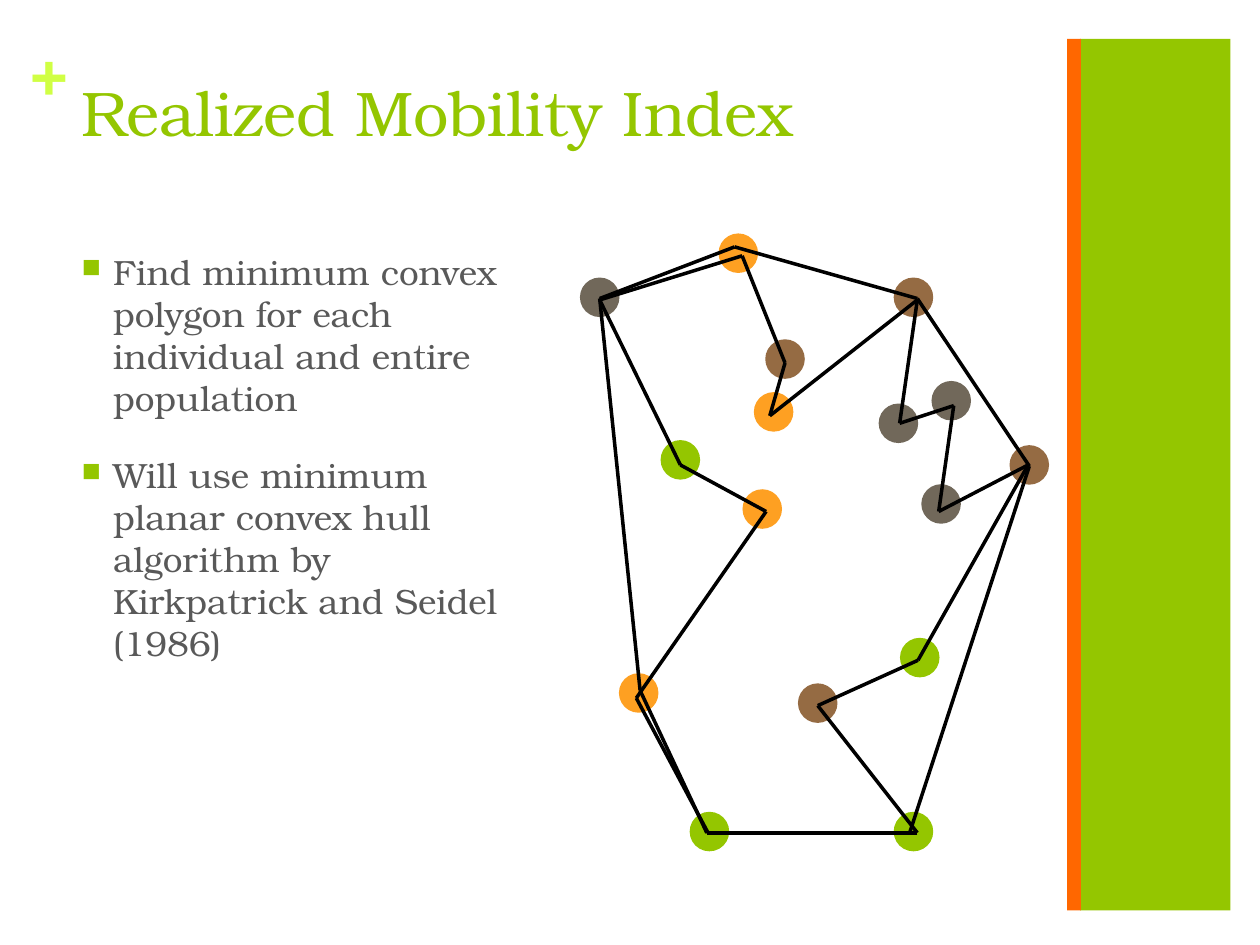
from dataclasses import dataclass
from typing import Any

from lxml.etree import SubElement
from pptx import Presentation
from pptx.dml.color import RGBColor
from pptx.enum.shapes import MSO_CONNECTOR, MSO_SHAPE
from pptx.enum.text import MSO_ANCHOR, PP_ALIGN
from pptx.oxml.ns import qn
from pptx.util import Pt

FONT = "TeX Gyre Bonum"
GREEN, ORANGE, LIME = "94C600", "FF6700", "D0FF44"
AMBER, GREY, BROWN = "FEA022", "71685A", "956B43"
TEXT, BLACK = "595959", "000000"
DOT_SIZE = 21.6

Point = tuple[float, float]


@dataclass(frozen=True)
class Area:
    left: float
    top: float
    width: float
    height: float

    def in_points(self) -> tuple[Pt, Pt, Pt, Pt]:
        return Pt(self.left), Pt(self.top), Pt(self.width), Pt(self.height)


@dataclass(frozen=True)
class DotGroup:
    color: str
    corners: list[Point]  # left and top of each dot


DOT_GROUPS = [
    DotGroup(AMBER, [(411.1, 133.9), (424.8, 280.1), (431.3, 224.6), (354.2, 385.2)]),
    DotGroup(GREY, [(532.8, 218.2), (502.6, 231.1), (527, 277.2), (331.9, 159.1)]),
    DotGroup(GREEN, [(378, 252), (514.8, 365), (394.6, 464.4), (511.2, 464.4)]),
    DotGroup(BROWN, [(456.5, 391), (511.2, 159.1), (437.8, 194.4), (577.4, 254.9)]),
]

# Closed outlines: through the outer and inner dots, and the convex hull
CONCAVE_OUTLINE = [
    (342.7, 171.4), (424.1, 146.2), (448.6, 207.4), (439.9, 237.6),
    (524.2, 171.4), (514.1, 241.9), (545, 231.8), (536.4, 292.3),
    (587.5, 265.7), (524.6, 377.3), (467.3, 403.2), (524.2, 475.9),
    (404.6, 475.9), (363.6, 398.9), (437.8, 292.3), (388.8, 265.7),
]
CONVEX_HULL = [
    (342.7, 170.6), (419.8, 141.1), (524.2, 170.6), (588.2, 266.4),
    (519.8, 475.9), (403.9, 475.9), (365.8, 394.6),
]


def color_of(value: str) -> RGBColor:
    return RGBColor.from_string(value)


def add_solid(page: Any, kind: MSO_SHAPE, area: Area, color: str, outline: float = 0) -> None:
    shape = page.shapes.add_shape(kind, *area.in_points())
    shape.shadow.inherit = False
    shape.fill.solid()
    shape.fill.fore_color.rgb = color_of(color)
    if outline:
        shape.line.color.rgb = color_of(color)
        shape.line.width = Pt(outline)
    else:
        shape.line.fill.background()


def add_bullet(para: Any, color: str) -> None:
    properties = para._p.get_or_add_pPr()
    properties.set("marL", str(Pt(18)))
    properties.set("indent", str(-Pt(18)))
    bullet_color = SubElement(properties, qn("a:buClr"))
    SubElement(bullet_color, qn("a:srgbClr"), val=color)
    SubElement(properties, qn("a:buSzPct"), val="75000")
    SubElement(properties, qn("a:buChar"), char="■")


def add_text(page: Any, area: Area, *lines: str, size: float, color: str, bold: bool = False,
             inset: Point = (7.2, 3.6), space_before: float = 0, bullet: str = "") -> None:
    box = page.shapes.add_textbox(*area.in_points())
    frame = box.text_frame
    frame.word_wrap = True
    frame.vertical_anchor = MSO_ANCHOR.TOP
    frame.margin_left = frame.margin_right = Pt(inset[0])
    frame.margin_top = frame.margin_bottom = Pt(inset[1])
    for index, line in enumerate(lines):
        para = frame.add_paragraph() if index else frame.paragraphs[0]
        para.alignment = PP_ALIGN.LEFT
        para.space_before = Pt(space_before)
        if bullet:
            add_bullet(para, bullet)
        span = para.add_run()
        span.text = line
        span.font.name = FONT
        span.font.size = Pt(size)
        span.font.bold = bold
        span.font.color.rgb = color_of(color)


def add_outline(page: Any, points: list[Point]) -> None:
    for start, end in zip(points, points[1:] + points[:1]):
        edge = page.shapes.add_connector(
            MSO_CONNECTOR.STRAIGHT, *(Pt(value) for value in start + end))
        edge.line.color.rgb = color_of(BLACK)
        edge.line.width = Pt(2)
        SubElement(edge._element.spPr, qn("a:effectLst"))


def main() -> None:
    deck = Presentation()
    deck.slide_width, deck.slide_height = Pt(720), Pt(540)
    page = deck.slides.add_slide(deck.slide_layouts[6])

    # Side bars and plus sign
    add_solid(page, MSO_SHAPE.RECTANGLE, Area(617.3, 22.3, 85.9, 498), GREEN)
    add_text(page, Area(17.3, 18, 20.9, 43.9), "+", size=36, color=LIME, bold=True, inset=(0, 0))
    add_solid(page, MSO_SHAPE.RECTANGLE, Area(609.8, 22.3, 7.9, 498), ORANGE)

    # Title and bullets
    add_text(page, Area(39.6, 38.2, 594.7, 87.8), "Realized Mobility Index", size=36, color=GREEN)
    add_text(
        page, Area(39.6, 139.7, 270.7, 380.9),
        "Find minimum convex polygon for each individual and entire population",
        "Will use minimum planar convex hull algorithm by Kirkpatrick and Seidel (1986)",
        size=20, color=TEXT, space_before=20, bullet=GREEN)

    # Dots, with the outlines on top
    for group in DOT_GROUPS:
        for left, top in group.corners:
            area = Area(left, top, DOT_SIZE, DOT_SIZE)
            add_solid(page, MSO_SHAPE.OVAL, area, group.color, outline=1)
    for outline in (CONCAVE_OUTLINE, CONVEX_HULL):
        add_outline(page, outline)

    deck.save("out.pptx")


if __name__ == "__main__":
    main()
